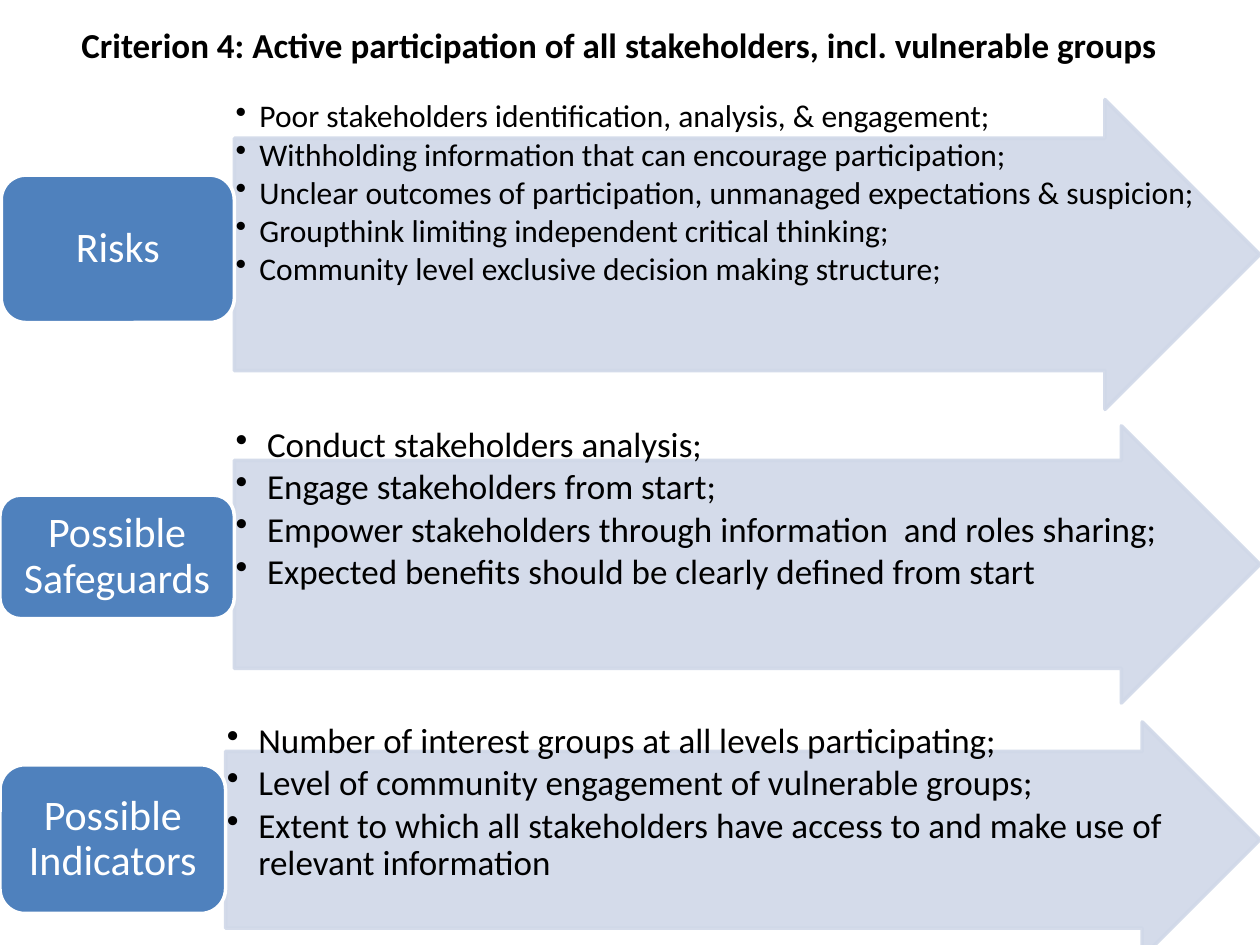
from lxml import etree
from pptx import Presentation
from pptx.dml.color import RGBColor
from pptx.enum.shapes import MSO_SHAPE
from pptx.enum.text import MSO_ANCHOR, PP_ALIGN
from pptx.oxml.ns import qn
from pptx.util import Inches, Pt

ARROW, ROUNDED = MSO_SHAPE.RIGHT_ARROW, MSO_SHAPE.ROUNDED_RECTANGLE
MIDDLE, TOP = MSO_ANCHOR.MIDDLE, MSO_ANCHOR.TOP
CENTER, LEFT = PP_ALIGN.CENTER, PP_ALIGN.LEFT
FONT = "Calibri"
BLACK, WHITE, BLUE, PALE = "000000", "FFFFFF", "4F81BD", "D0D8E8"
TITLE = "Criterion 4: Active participation of all stakeholders, incl. vulnerable groups"

# Label, label box, arrow box, text size, hanging indent, points
ROWS = [
    ("Risks", (0.01, 1.39, 1.85, 1.17), (1.86, 0.79, 8.14, 2.46), 18, 0.19, [
        "Poor stakeholders identification, analysis, & engagement;",
        "Withholding information that can encourage participation;",
        "Unclear outcomes of participation, unmanaged expectations & suspicion;",
        "Groupthink limiting independent critical thinking;",
        "Community level exclusive decision making structure;",
    ]),
    ("Possible Safeguards", (0, 3.93, 1.86, 0.98), (1.86, 3.38, 8.14, 2.2), 20, 0.25, [
        "Conduct stakeholders analysis;",
        "Engage stakeholders from start;",
        "Empower stakeholders through information  and roles sharing;",
        "Expected benefits should be clearly defined from start",
    ]),
    ("Possible Indicators", (0, 6.07, 1.79, 1.18), (1.79, 5.73, 8.21, 1.87), 20, 0.25, [
        "Number of interest groups at all levels participating;",
        "Level of community engagement of vulnerable groups;",
        "Extent to which all stakeholders have access to and make use of relevant information",
    ]),
]


def rgb(hex_color):
    return RGBColor.from_string(hex_color)


def inches(box):
    return [Inches(length) for length in box]


def style(paragraph, size, color, align, bold=False):
    paragraph.alignment = align
    font = paragraph.font
    font.name, font.size, font.bold = FONT, Pt(size), bold
    font.color.rgb = rgb(color)


def set_frame(frame, inset, anchor):
    frame.word_wrap = True
    frame.vertical_anchor = anchor
    frame.margin_left = frame.margin_right = Inches(inset)
    frame.margin_top = frame.margin_bottom = Inches(inset)


def add_panel(slide, preset, box, fill, line):
    panel = slide.shapes.add_shape(preset, *inches(box))
    panel.shadow.inherit = False
    panel.fill.solid()
    panel.fill.fore_color.rgb = rgb(fill)
    panel.line.color.rgb = rgb(line)
    panel.line.width = Pt(2)
    return panel


def add_title(slide, box):
    title = slide.shapes.title
    title.left, title.top, title.width, title.height = inches(box)
    title.text_frame.text = TITLE
    title.text_frame.vertical_anchor = MIDDLE
    style(title.text_frame.paragraphs[0], 20, BLACK, CENTER, bold=True)


def add_arrow(slide, box):
    arrow = add_panel(slide, ARROW, box, PALE, PALE)
    arrow.adjustments[0], arrow.adjustments[1] = 0.75, 0.5
    # 90% opacity on both fill and outline
    for color in arrow._element.spPr.iter(qn("a:srgbClr")):
        etree.SubElement(color, qn("a:alpha"), val="90000")


def add_points(slide, box, points, size, indent):
    frame = slide.shapes.add_textbox(*inches(box)).text_frame
    set_frame(frame, 0.01, TOP)
    for i, point in enumerate(points):
        paragraph = frame.add_paragraph() if i else frame.paragraphs[0]
        paragraph.text = point
        paragraph.level = 1
        paragraph.line_spacing = 0.9
        paragraph.space_after = Pt(round(size * 0.13, 1))
        style(paragraph, size, BLACK, LEFT)
        # Hanging bullet
        properties = paragraph._p.get_or_add_pPr()
        properties.set("marL", str(Inches(indent)))
        properties.set("indent", str(-Inches(indent)))
        bullet = etree.Element(qn("a:buChar"), char="•")
        properties.find(qn("a:defRPr")).addprevious(bullet)


def add_label(slide, box, label):
    frame = add_panel(slide, ROUNDED, box, BLUE, WHITE).text_frame
    set_frame(frame, 0.05, MIDDLE)
    frame.text = label
    frame.paragraphs[0].line_spacing = 0.9
    style(frame.paragraphs[0], 24, WHITE, CENTER)


def main():
    prs = Presentation()
    prs.slide_width, prs.slide_height = Inches(10), Inches(7.5)
    slide = prs.slides.add_slide(prs.slide_layouts[5])
    add_title(slide, (0.5, 0.05, 8.83, 0.61))
    for label, label_box, arrow_box, size, indent, points in ROWS:
        add_arrow(slide, arrow_box)
        add_points(slide, arrow_box, points, size, indent)
        add_label(slide, label_box, label)
    prs.save("out.pptx")


if __name__ == "__main__":
    main()
